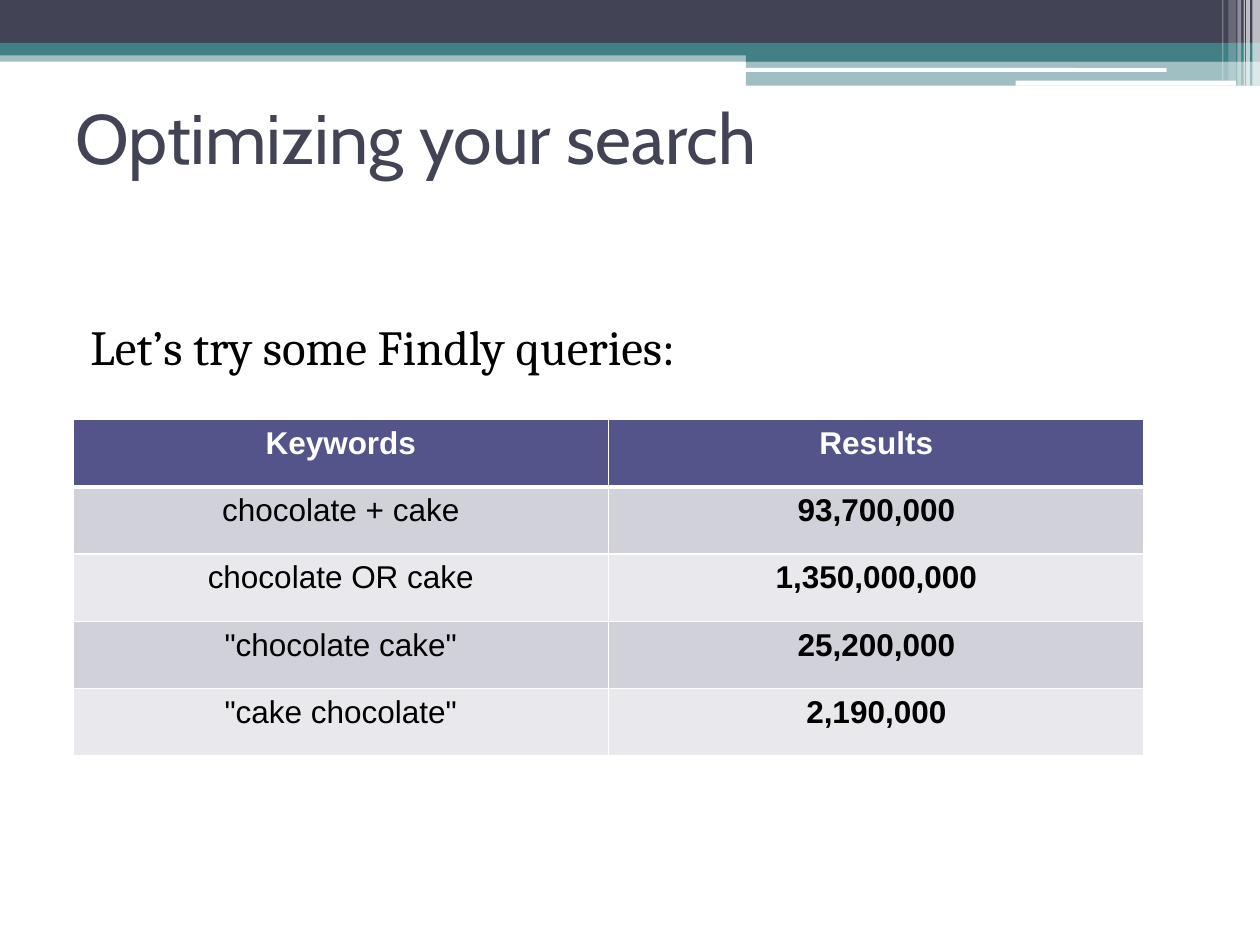
from pptx import Presentation
from pptx.dml.color import RGBColor
from pptx.enum.shapes import MSO_SHAPE
from pptx.enum.text import MSO_ANCHOR, PP_ALIGN
from pptx.oxml import parse_xml
from pptx.oxml.ns import nsdecls, qn
from pptx.util import Inches, Pt
from lxml.etree import SubElement

THEME = {
    "slate": "424456", "teal": "438086", "white": "FFFFFF", "black": "000000",
    "header": "53548A", "bands": ("D1D1DA", "E9E9ED"),
    "title": {"name": "Cabin", "size": Pt(40)},
    "body": {"name": "Cambria", "size": Pt(28)},
    "cell": {"name": "Arial", "size": Pt(18)},
}


def paint(fill, color, opacity=100):
    fill.solid()
    fill.fore_color.rgb = RGBColor.from_string(color)
    if opacity < 100:
        tint = fill._xPr.find(qn("a:solidFill"))[0]
        SubElement(tint, qn("a:alpha"), val=str(opacity * 1000))


def write(para, text, color, style):
    span = para.add_run()
    span.text = text
    for name, value in style.items():
        setattr(span.font, name, value)
    span.font.color.rgb = RGBColor.from_string(color)


deck = Presentation()
deck.slide_width, deck.slide_height = Inches(10), Inches(7.5)
page = deck.slides.add_slide(deck.slide_layouts[6])

bar, rounded = MSO_SHAPE.RECTANGLE, MSO_SHAPE.ROUNDED_RECTANGLE
white, teal = THEME["white"], THEME["teal"]
header_bands = [
    (bar, 0, 0.4, 10, 0.09, teal, 50),
    (bar, 0, 0, 10, 0.34, THEME["slate"], 100),
    (bar, 0, 0.34, 10, 0.1, teal, 100),
    (bar, 5.92, 0.39, 4.08, 0.1, teal, 100),
    (bar, 5.92, 0.48, 4.08, 0.2, teal, 50),
    (rounded, 5.91, 0.54, 3.35, 0.03, white, 100),
    (rounded, 8.06, 0.64, 1.75, 0.04, white, 100),
]
corner_stripes = [
    (9.94, 0.06, 0.68, 65), (9.89, 0.03, 0.68, 65), (9.87, 0.01, 0.68, 60),
    (9.82, 0.03, 0.68, 40), (9.75, 0.06, 0.64, 20), (9.7, 0.01, 0.64, 30),
]
for left, width, height, opacity in corner_stripes:
    header_bands.append((bar, left, 0, width, height, white, opacity))

for kind, left, top, width, height, color, opacity in header_bands:
    band = page.shapes.add_shape(kind, Inches(left), Inches(top), Inches(width), Inches(height))
    band.shadow.inherit = False
    band.line.fill.background()
    paint(band.fill, color, opacity)

texts = [
    ("Optimizing your search", 0.5, 1.17, MSO_ANCHOR.MIDDLE, "title", THEME["slate"]),
    ("Let’s try some Findly queries:", 2.46, 4.73, MSO_ANCHOR.TOP, "body", THEME["black"]),
]
for text, top, height, anchor, style, color in texts:
    box = page.shapes.add_textbox(Inches(0.5), Inches(top), Inches(9), Inches(height))
    box.text_frame.word_wrap = True
    box.text_frame.vertical_anchor = anchor
    para = box.text_frame.paragraphs[0]
    write(para, text, color, THEME[style])
    if style == "body":
        para.space_before = Pt(3)
        properties = para._p.get_or_add_pPr()
        properties.set("marL", str(Inches(0.4)))
        properties.set("indent", str(Inches(-0.28)))

queries = [
    ("Keywords", "Results"),
    ("chocolate + cake", "93,700,000"),
    ("chocolate OR cake", "1,350,000,000"),
    ('"chocolate cake"', "25,200,000"),
    ('"cake chocolate"', "2,190,000"),
]
frame = page.shapes.add_table(len(queries), 2, Inches(0.58), Inches(3.33), Inches(8.5), Inches(2.67))
for row, values in enumerate(queries):
    for column, value in enumerate(values):
        cell = frame.table.cell(row, column)
        para = cell.text_frame.paragraphs[0]
        para.alignment = PP_ALIGN.CENTER
        is_header = row == 0
        bold = is_header or column == 1
        write(para, value, white if is_header else THEME["black"], {**THEME["cell"], "bold": bold})
        for side in "LRTB":
            under_header = (row, side) in ((0, "B"), (1, "T"))
            cell._tc.get_or_add_tcPr().append(parse_xml(
                f'<a:ln{side} {nsdecls("a")} w="{Pt(3 if under_header else 1)}">'
                f'<a:solidFill><a:srgbClr val="{white}"/></a:solidFill></a:ln{side}>'))
        paint(cell.fill, THEME["header"] if is_header else THEME["bands"][(row - 1) % 2])

deck.save("out.pptx")
